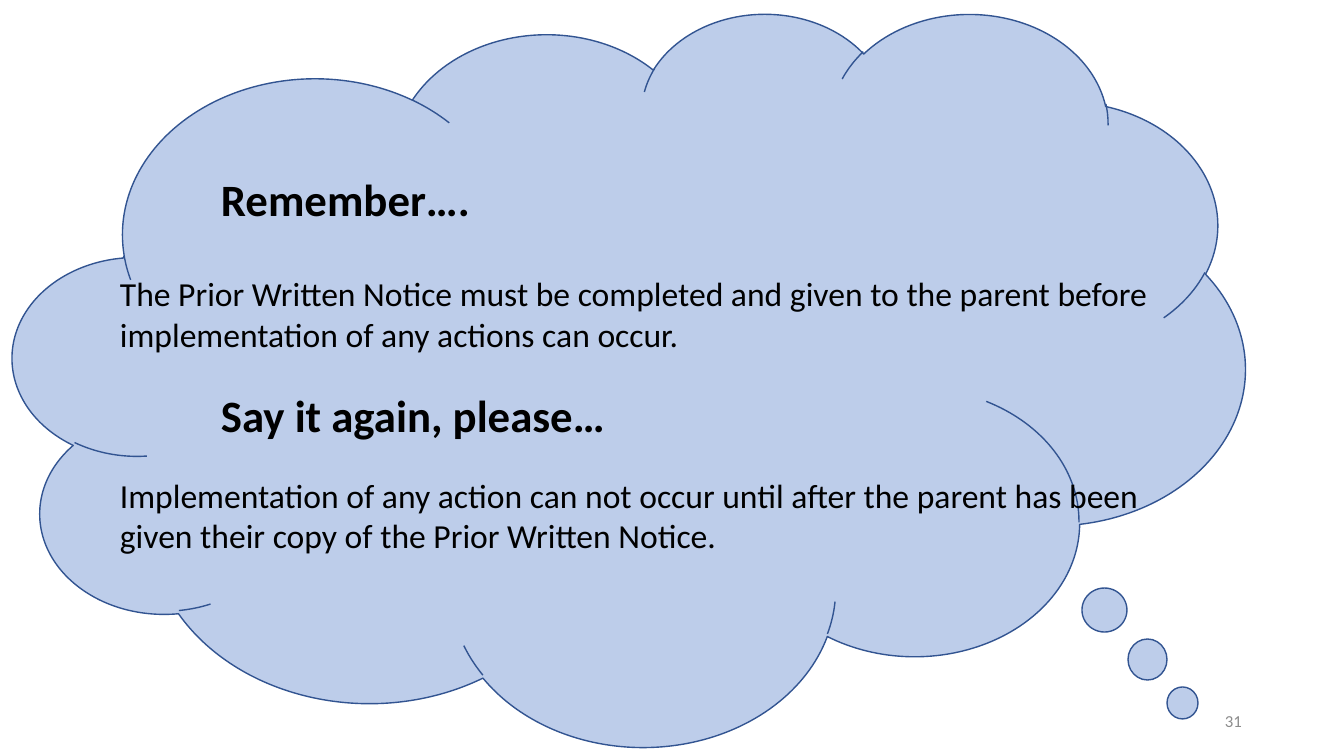
"""Build the thought-cloud reminder slide about Prior Written Notice."""
from dataclasses import dataclass

from lxml import etree
from pptx import Presentation
from pptx.dml.color import RGBColor
from pptx.enum.shapes import MSO_SHAPE
from pptx.enum.text import MSO_ANCHOR, MSO_AUTO_SIZE, PP_ALIGN
from pptx.oxml.ns import qn
from pptx.util import Emu, Pt

CLOUD = MSO_SHAPE.CLOUD
OVAL = MSO_SHAPE.OVAL
MIDDLE = MSO_ANCHOR.MIDDLE
TOP = MSO_ANCHOR.TOP
GROW = MSO_AUTO_SIZE.SHAPE_TO_FIT_TEXT
NO_FIT = MSO_AUTO_SIZE.NONE
LEFT = PP_ALIGN.LEFT
RIGHT = PP_ALIGN.RIGHT

EMU_PER_PX = 914400 / 100.8
BLANK_LAYOUT = 6


@dataclass(frozen=True)
class Theme:
    font: str = "Calibri"
    ink: RGBColor = RGBColor(0x00, 0x00, 0x00)
    muted: RGBColor = RGBColor(0x8C, 0x8C, 0x8C)
    puff_fill: RGBColor = RGBColor(0x44, 0x72, 0xC4)
    puff_line: RGBColor = RGBColor(0x32, 0x54, 0x91)
    puff_opacity: int = 35
    line_width: int = 1
    heading: int = 32
    body: int = 24
    page_number: int = 12


THEME = Theme()


@dataclass(frozen=True)
class Box:
    left: int
    top: int
    width: int
    height: int

    def emu(self) -> tuple[Emu, Emu, Emu, Emu]:
        """Return the box as EMU lengths."""
        return px(self.left), px(self.top), px(self.width), px(self.height)


@dataclass(frozen=True)
class Puff:
    preset: MSO_SHAPE
    box: Box


@dataclass(frozen=True)
class Line:
    text: str
    size: int
    color: RGBColor = THEME.ink
    bold: bool = False
    indent: int = 0
    space_before: int = 0
    align: PP_ALIGN = LEFT


PAGE_NUMBER_BOX = Box(950, 701, 302, 40)
PAGE_NUMBER = Line("31", THEME.page_number, THEME.muted, align=RIGHT)
THOUGHT_CLOUD = Puff(CLOUD, Box(13, 12, 1232, 733))
THOUGHT_TRAIL = (
    Puff(OVAL, Box(1082, 588, 45, 44)),
    Puff(OVAL, Box(1128, 639, 39, 41)),
    Puff(OVAL, Box(1167, 687, 31, 32)),
)
REMINDER_BOX = Box(110, 167, 1089, 465)
REMINDER = (
    Line("Remember….", THEME.heading, bold=True, indent=101),
    Line(
        "The Prior Written Notice must be completed and given to the parent "
        "before implementation of any actions can occur.",
        THEME.body, space_before=34,
    ),
    Line("Say it again, please…", THEME.heading, bold=True, indent=101, space_before=24),
    Line(
        "Implementation of any action can not occur until after the parent "
        "has been given their copy of the Prior Written Notice.",
        THEME.body, space_before=24,
    ),
)


def px(length: int) -> Emu:
    """Convert px to EMU."""
    return Emu(round(length * EMU_PER_PX))


def add_puff(slide, puff: Puff) -> None:
    """Draw one translucent part of the thought cloud."""
    shape = slide.shapes.add_shape(puff.preset, *puff.box.emu())
    shape.shadow.inherit = False
    shape.fill.solid()
    shape.fill.fore_color.rgb = THEME.puff_fill
    tint = shape.element.spPr.find(f"{qn('a:solidFill')}/{qn('a:srgbClr')}")
    etree.SubElement(tint, qn("a:alpha")).set("val", str(THEME.puff_opacity * 1000))
    shape.line.color.rgb = THEME.puff_line
    shape.line.width = Pt(THEME.line_width)


def add_text(slide, box: Box, lines: tuple[Line, ...], anchor: MSO_ANCHOR,
             fit: MSO_AUTO_SIZE) -> None:
    """Write styled paragraphs into a wrapping text box."""
    frame = slide.shapes.add_textbox(*box.emu()).text_frame
    frame.word_wrap = True
    frame.auto_size = fit
    frame.vertical_anchor = anchor
    for index, line in enumerate(lines):
        paragraph = frame.add_paragraph() if index else frame.paragraphs[0]
        paragraph.alignment = line.align
        paragraph.space_before = Pt(line.space_before)
        if line.indent:
            paragraph._p.get_or_add_pPr().set("marL", str(px(line.indent)))
        run = paragraph.add_run()
        run.text = line.text
        run.font.name = THEME.font
        run.font.size = Pt(line.size)
        run.font.bold = line.bold
        run.font.color.rgb = line.color


def main() -> None:
    """Assemble and save the slide."""
    deck = Presentation()
    deck.slide_width = px(1344)
    deck.slide_height = px(756)
    slide = deck.slides.add_slide(deck.slide_layouts[BLANK_LAYOUT])
    add_text(slide, PAGE_NUMBER_BOX, (PAGE_NUMBER,), MIDDLE, NO_FIT)
    add_puff(slide, THOUGHT_CLOUD)
    add_text(slide, REMINDER_BOX, REMINDER, TOP, GROW)
    for puff in THOUGHT_TRAIL:
        add_puff(slide, puff)
    deck.save("out.pptx")


if __name__ == "__main__":
    main()
